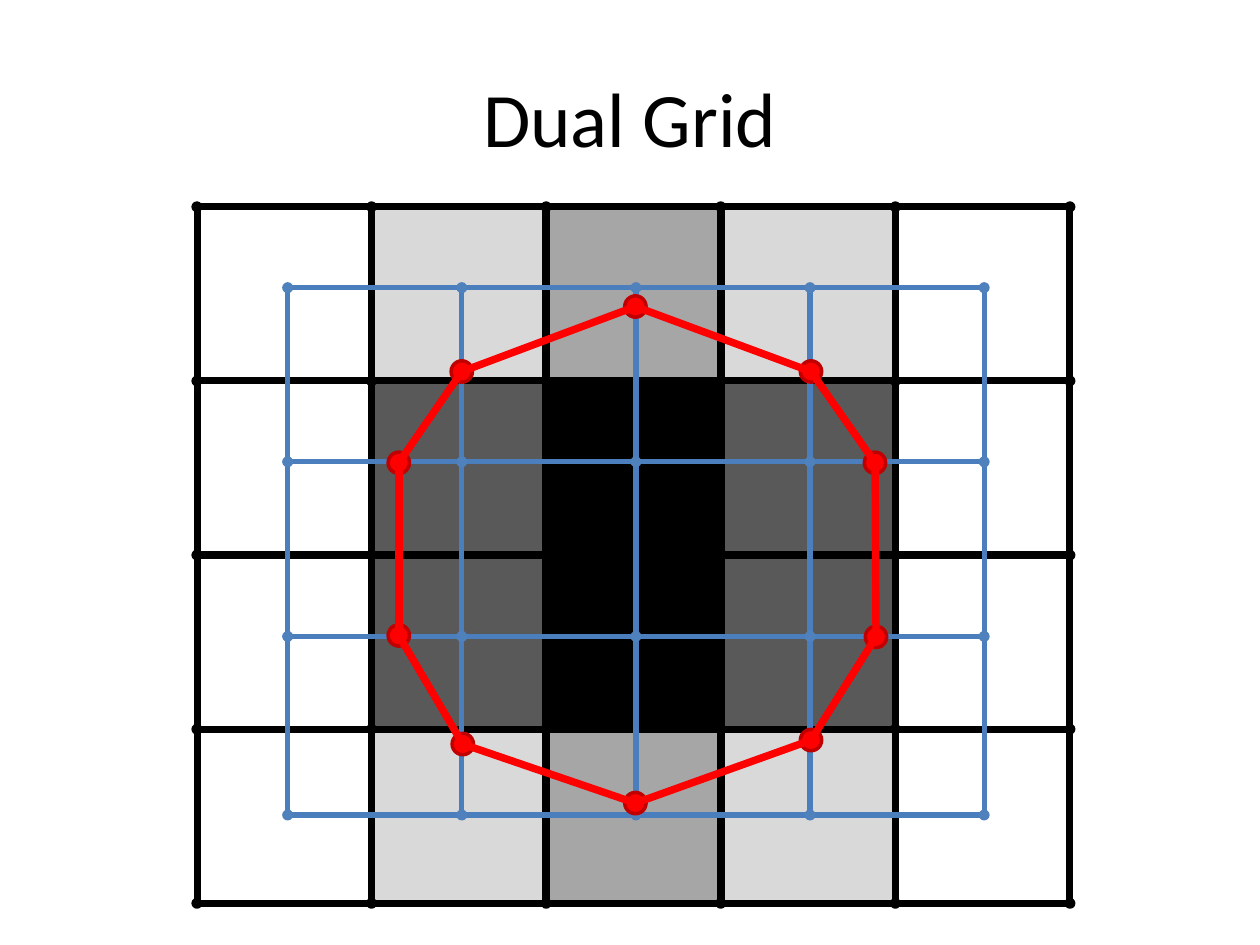
from itertools import product

from lxml.etree import SubElement
from pptx import Presentation
from pptx.dml.color import RGBColor
from pptx.enum.shapes import MSO_CONNECTOR, MSO_SHAPE
from pptx.enum.text import MSO_ANCHOR, PP_ALIGN
from pptx.oxml.ns import qn
from pptx.util import Cm, Pt

COLORS = {
    "black": "000000", "dark": "595959", "middle": "A6A6A6", "light": "D9D9D9",
    "dual_line": "4B7EBC", "dual_node": "4F81BD",
    "contour": "FF0000", "contour_edge": "C00000",
}

deck = Presentation()
deck.slide_width, deck.slide_height = Cm(25.4), Cm(19.05)
page = deck.slides.add_slide(deck.slide_layouts[5])


def add_figure(kind, center, size, fill, outline=None):
    """Add a preset shape around its center, with a 2 pt outline if one is named."""
    (x, y), (width, height) = center, size
    shape = page.shapes.add_shape(
        kind, Cm(x - width / 2), Cm(y - height / 2), Cm(width), Cm(height))
    shape.shadow.inherit = False
    shape.fill.solid()
    shape.fill.fore_color.rgb = RGBColor.from_string(COLORS[fill])
    if outline:
        shape.line.color.rgb = RGBColor.from_string(COLORS[outline])
        shape.line.width = Pt(2)
    else:
        shape.line.fill.background()
    return shape


def add_line(start, end, color, weight):
    line = page.shapes.add_connector(
        MSO_CONNECTOR.STRAIGHT, *[Cm(value) for value in (*start, *end)])
    line.line.color.rgb = RGBColor.from_string(COLORS[color])
    line.line.width = Pt(weight)
    SubElement(line._element.spPr, qn("a:effectLst"))


# Title
title = page.shapes.title
title.left, title.top, title.width, title.height = Cm(1.27), Cm(0.76), Cm(22.86), Cm(3.18)
title.text_frame.text = "Dual Grid"
title.text_frame.vertical_anchor = MSO_ANCHOR.MIDDLE
para = title.text_frame.paragraphs[0]
para.alignment = PP_ALIGN.CENTER
span = para.runs[0]
span.font.size = Pt(44)
span.font.name = "Calibri"
span.font.color.rgb = RGBColor.from_string(COLORS["black"])

# Primal grid: shaded cells, then cell frames, then corner nodes
GRID_LEFT, GRID_TOP = 3.97, 4.17
STEP_X, STEP_Y = 3.52, 3.51
SHADES = [
    ["light", "middle", "light"],
    ["dark", "black", "dark"],
    ["dark", "black", "dark"],
    ["light", "middle", "light"],
]
cell_centers = [
    [(GRID_LEFT + (column + 0.5) * STEP_X, GRID_TOP + (row + 0.5) * STEP_Y)
     for column in range(5)] for row in range(4)]

for centers, shades in zip(cell_centers, SHADES):
    for center, shade in zip(centers[1:4], shades):
        add_figure(MSO_SHAPE.RECTANGLE, center, (3.46, 3.48), shade)

for centers in cell_centers:
    for center in centers:
        frame = add_figure(MSO_SHAPE.FRAME, center, (3.58, 3.58), "black", "black")
        frame.adjustments[0] = 0.02

for row, column in product(range(5), range(6)):
    corner = (GRID_LEFT + column * STEP_X, GRID_TOP + row * STEP_Y)
    add_figure(MSO_SHAPE.OVAL, corner, (0.15, 0.15), "black", "black")

# Dual grid through the cell centers
dual_columns = [5.8 + 3.51 * column for column in range(5)]
dual_rows = [5.8, 9.31, 12.83, 16.43]

for x in dual_columns:
    add_line((x, dual_rows[-1]), (x, dual_rows[0]), "dual_line", 3)
for y in dual_rows:
    add_line((dual_columns[0], y), (dual_columns[-1], y), "dual_line", 3)
for node in product(dual_columns, dual_rows):
    add_figure(MSO_SHAPE.OVAL, node, (0.15, 0.15), "dual_node", "dual_node")

# Closed contour, counterclockwise from the top
contour = [
    (12.81, 6.18), (9.31, 7.49), (8.04, 9.33), (8.04, 12.81), (9.33, 15),
    (12.81, 16.19), (16.35, 14.92), (17.66, 12.84), (17.64, 9.33), (16.35, 7.49),
]
for vertex in contour:
    add_figure(MSO_SHAPE.OVAL, vertex, (0.43, 0.43), "contour", "contour_edge")
for start, end in zip(contour, contour[1:] + contour[:1]):
    add_line(start, end, "contour", 4.25)

deck.save("out.pptx")
